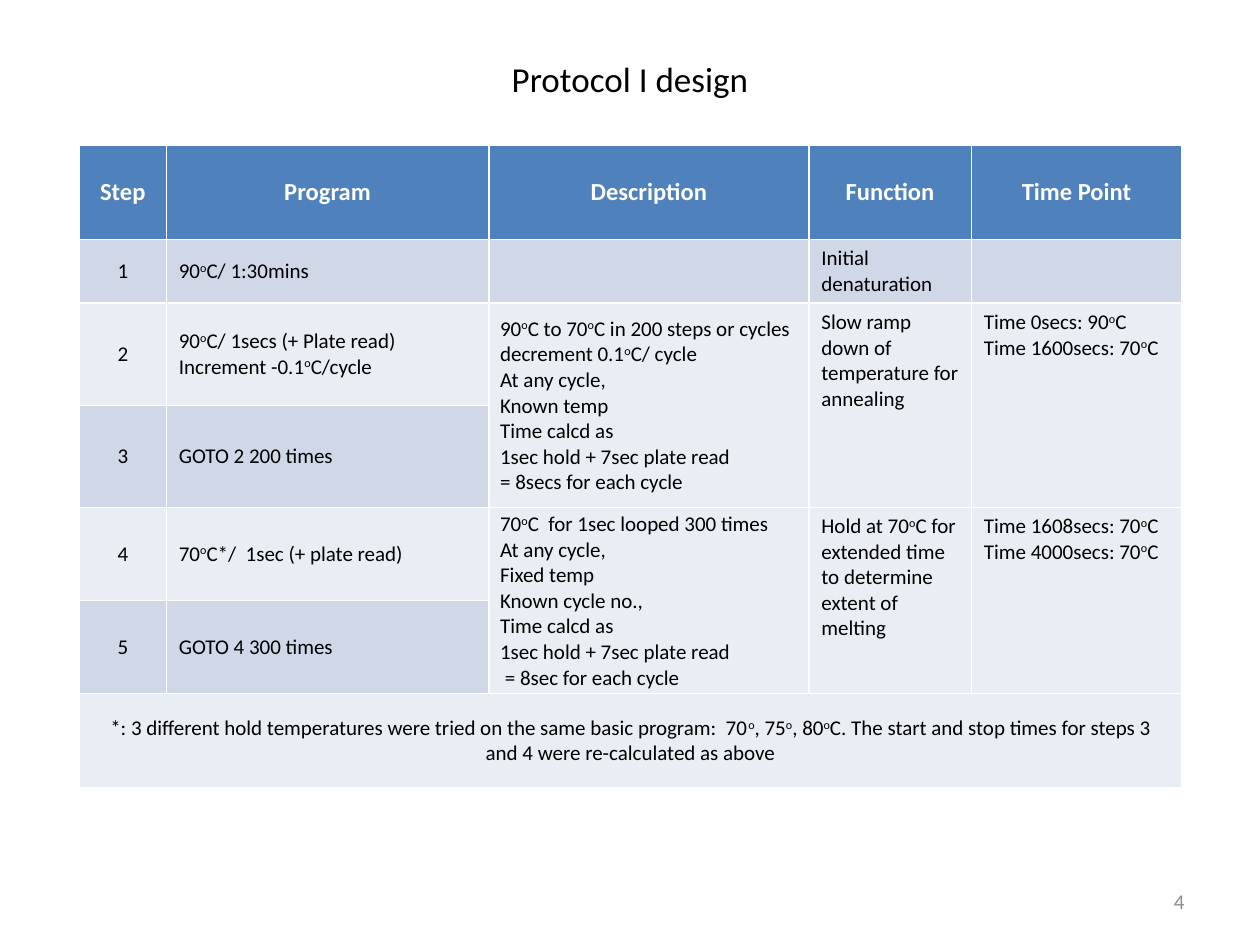
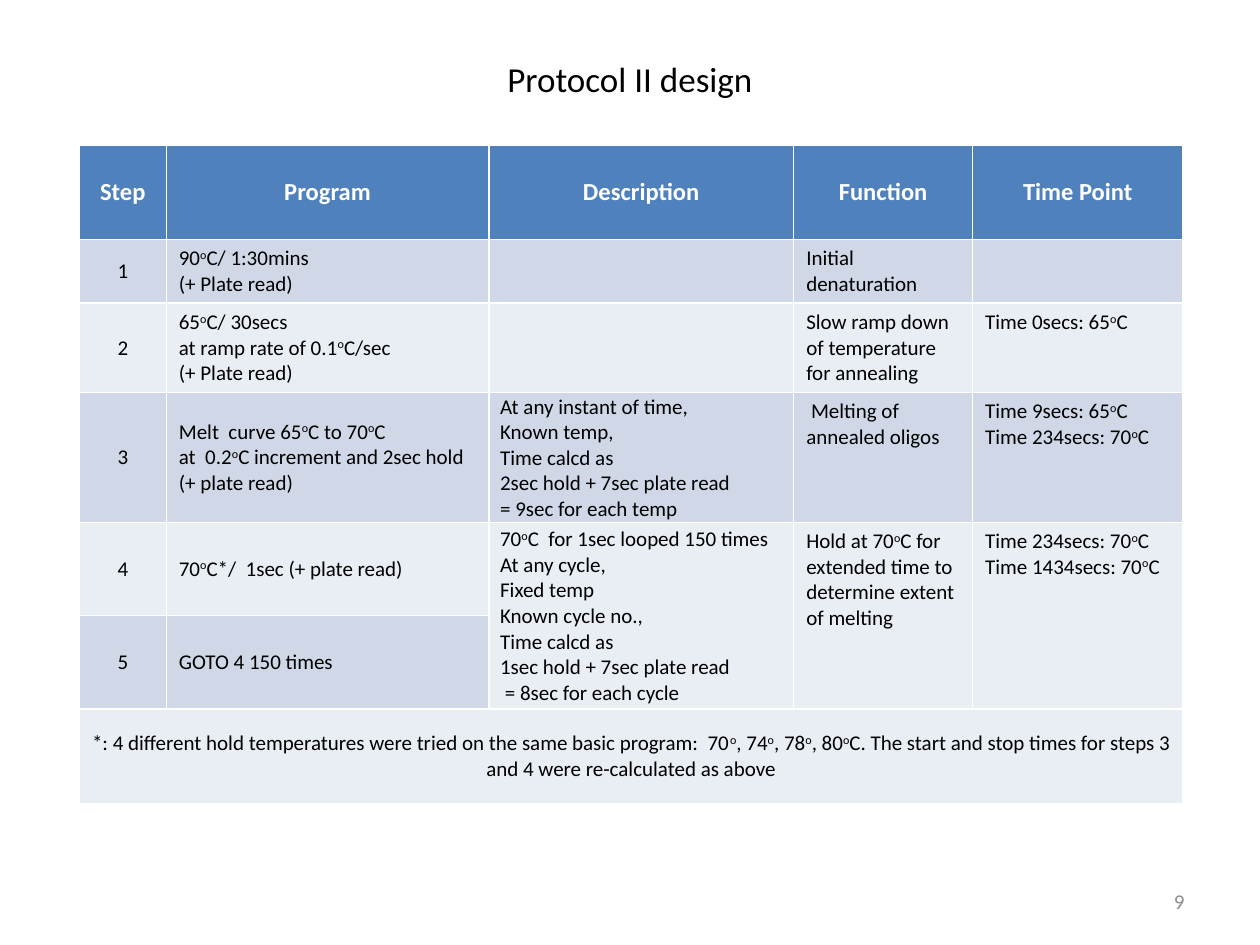
import pptx
import pptx.dml.color
import pptx.enum.text
import pptx.util
from typing import NamedTuple, Optional

from pptx.util import Inches

FONT = "Calibri"
BLACK, WHITE, GREY = "000000", "FFFFFF", "8C8C8C"
HEADER_FILL, DARK_BAND, LIGHT_BAND = "4F81BD", "D0D8E8", "E9EDF4"
HEADINGS = ["Step", "Program", "Description", "Function", "Time Point"]
HEADER_HEIGHT = FOOTNOTE_HEIGHT = 0.75
DESCRIPTION_COLUMN = 2
TITLE_ONLY_LAYOUT = 5
DEGREE = "^o"

ALIGN = pptx.enum.text.PP_ALIGN
MIDDLE = pptx.enum.text.MSO_ANCHOR.MIDDLE
TOP = pptx.enum.text.MSO_ANCHOR.TOP


class Step(NamedTuple):
    """Details of None continue the merged cells of the step above."""

    height: float
    program: str
    details: Optional[tuple[str, str, str]] = None


class Protocol(NamedTuple):
    title: str
    page_number: str
    column_widths: list[float]
    steps: list[Step]
    footnote: str


def colour(value: str) -> pptx.dml.color.RGBColor:
    return pptx.dml.color.RGBColor.from_string(value)


def write(frame, text: str, size: int, text_colour: str, align=ALIGN.LEFT, bold: bool = False) -> None:
    frame.word_wrap = True
    for index, line in enumerate(text.split("\n")):
        para = frame.paragraphs[0] if index == 0 else frame.add_paragraph()
        para.alignment = align
        para.font.name = FONT
        para.font.size = pptx.util.Pt(size)
        para.font.bold = bold
        para.font.color.rgb = colour(text_colour)
        for part_index, part in enumerate(line.split(DEGREE)):
            if part_index:
                degree = para.add_run()
                degree.text = "o"
                degree.font._element.set("baseline", "30000")
            if part:
                para.add_run().text = part


def fill_cell(cell, text: str, fill: str, align=ALIGN.LEFT, anchor=MIDDLE,
              size: int = 12, text_colour: str = BLACK, bold: bool = False) -> None:
    cell.fill.solid()
    cell.fill.fore_color.rgb = colour(fill)
    cell.vertical_anchor = anchor
    write(cell.text_frame, text, size, text_colour, align, bold)


def fill_details(table, row: int, details: tuple[str, str, str], fill: str) -> None:
    for column, text in enumerate(details, DESCRIPTION_COLUMN):
        cell = table.cell(row, column)
        is_description = column == DESCRIPTION_COLUMN
        fill_cell(cell, text, fill, anchor=MIDDLE if is_description else TOP)
        if is_description and text:
            cell.margin_left = Inches(0.09)
            cell.margin_top = cell.margin_right = Inches(0.01)
            cell.margin_bottom = 0


def add_protocol_table(page, protocol: Protocol) -> None:
    heights = [HEADER_HEIGHT, *(step.height for step in protocol.steps), FOOTNOTE_HEIGHT]
    table = page.shapes.add_table(
        len(heights), len(HEADINGS), Inches(0.63), Inches(1.15),
        Inches(sum(protocol.column_widths)), Inches(sum(heights))).table
    for column, width in zip(table.columns, protocol.column_widths):
        column.width = Inches(width)
    for row, height in zip(table.rows, heights):
        row.height = Inches(height)

    for column, heading in enumerate(HEADINGS):
        fill_cell(table.cell(0, column), heading, HEADER_FILL, ALIGN.CENTER,
                  size=14, text_colour=WHITE, bold=True)

    for number, step in enumerate(protocol.steps, 1):
        band = DARK_BAND if number % 2 else LIGHT_BAND
        fill_cell(table.cell(number, 0), str(number), band, ALIGN.CENTER)
        fill_cell(table.cell(number, 1), step.program, band)
        if step.details:
            fill_details(table, number, step.details, band)
        else:
            for column in range(DESCRIPTION_COLUMN, len(HEADINGS)):
                table.cell(number - 1, column).merge(table.cell(number, column))

    last = len(heights) - 1
    table.cell(last, 0).merge(table.cell(last, len(HEADINGS) - 1))
    fill_cell(table.cell(last, 0), protocol.footnote, LIGHT_BAND, ALIGN.CENTER)


def add_protocol_page(deck, protocol: Protocol) -> None:
    page = deck.slides.add_slide(deck.slide_layouts[TITLE_ONLY_LAYOUT])
    title = page.shapes.title
    title.left, title.top, title.width, title.height = Inches(0.5), 0, Inches(9), Inches(1.25)
    title.text_frame.vertical_anchor = MIDDLE
    write(title.text_frame, protocol.title, 20, BLACK, ALIGN.CENTER)

    add_protocol_table(page, protocol)

    number_box = page.shapes.add_textbox(Inches(7.17), Inches(6.95), Inches(2.33), Inches(0.4))
    number_box.text_frame.vertical_anchor = MIDDLE
    write(number_box.text_frame, protocol.page_number, 12, GREY, ALIGN.RIGHT)


def hold_description(cycles: int) -> str:
    return (f"70^oC  for 1sec looped {cycles} times\nAt any cycle,\nFixed temp\nKnown cycle no.,\n"
            "Time calcd as\n1sec hold + 7sec plate read\n = 8sec for each cycle")


def hold_steps(cycles: int, times: str) -> list[Step]:
    return [
        Step(0.74, "70^oC*/  1sec (+ plate read)",
             (hold_description(cycles),
              "Hold at 70^oC for extended time to determine extent of melting", times)),
        Step(0.74, f"GOTO 4 {cycles} times"),
    ]


def footnote(temperatures: list[int]) -> str:
    listed = ", ".join(f"{temperature}^o" for temperature in temperatures)
    return (f"*: {len(temperatures)} different hold temperatures were tried on the same basic program:  "
            f"{listed}C. The start and stop times for steps 3 and 4 were re-calculated as above")


DENATURATION = ("", "Initial denaturation", "")
ANNEALING = "Slow ramp down of temperature for annealing"

PROTOCOLS = [
    Protocol(
        "Protocol I design", "4", [0.69, 2.56, 2.54, 1.29, 1.67],
        [
            Step(0.5, "90^oC/ 1:30mins", DENATURATION),
            Step(0.81, "90^oC/ 1secs (+ Plate read)\nIncrement -0.1^oC/cycle",
                 ("90^oC to 70^oC in 200 steps or cycles\ndecrement 0.1^oC/ cycle\nAt any cycle,\n"
                  "Known temp\nTime calcd as\n1sec hold + 7sec plate read\n= 8secs for each cycle",
                  ANNEALING, "Time 0secs: 90^oC\nTime 1600secs: 70^oC")),
            Step(0.81, "GOTO 2 200 times"),
            *hold_steps(300, "Time 1608secs: 70^oC\nTime 4000secs: 70^oC"),
        ],
        footnote([70, 75, 80])),
    Protocol(
        "Protocol II design", "9", [0.69, 2.56, 2.42, 1.42, 1.67],
        [
            Step(0.5, "90^oC/ 1:30mins\n(+ Plate read)", DENATURATION),
            Step(0.71, "65^oC/ 30secs\nat ramp rate of 0.1^oC/sec\n(+ Plate read)",
                 ("", ANNEALING, "Time 0secs: 65^oC")),
            Step(1.03, "Melt  curve 65^oC to 70^oC\nat  0.2^oC increment and 2sec hold\n(+ plate read)",
                 ("At any instant of time,\nKnown temp,\nTime calcd as\n"
                  "2sec hold + 7sec plate read\n= 9sec for each temp",
                  " Melting of annealed oligos", "Time 9secs: 65^oC\nTime 234secs: 70^oC")),
            *hold_steps(150, "Time 234secs: 70^oC\nTime 1434secs: 70^oC"),
        ],
        footnote([70, 74, 78, 80])),
]


def main() -> None:
    deck = pptx.Presentation()
    deck.slide_width, deck.slide_height = Inches(10), Inches(7.5)
    for protocol in PROTOCOLS:
        add_protocol_page(deck, protocol)
    deck.save("out.pptx")


if __name__ == "__main__":
    main()
